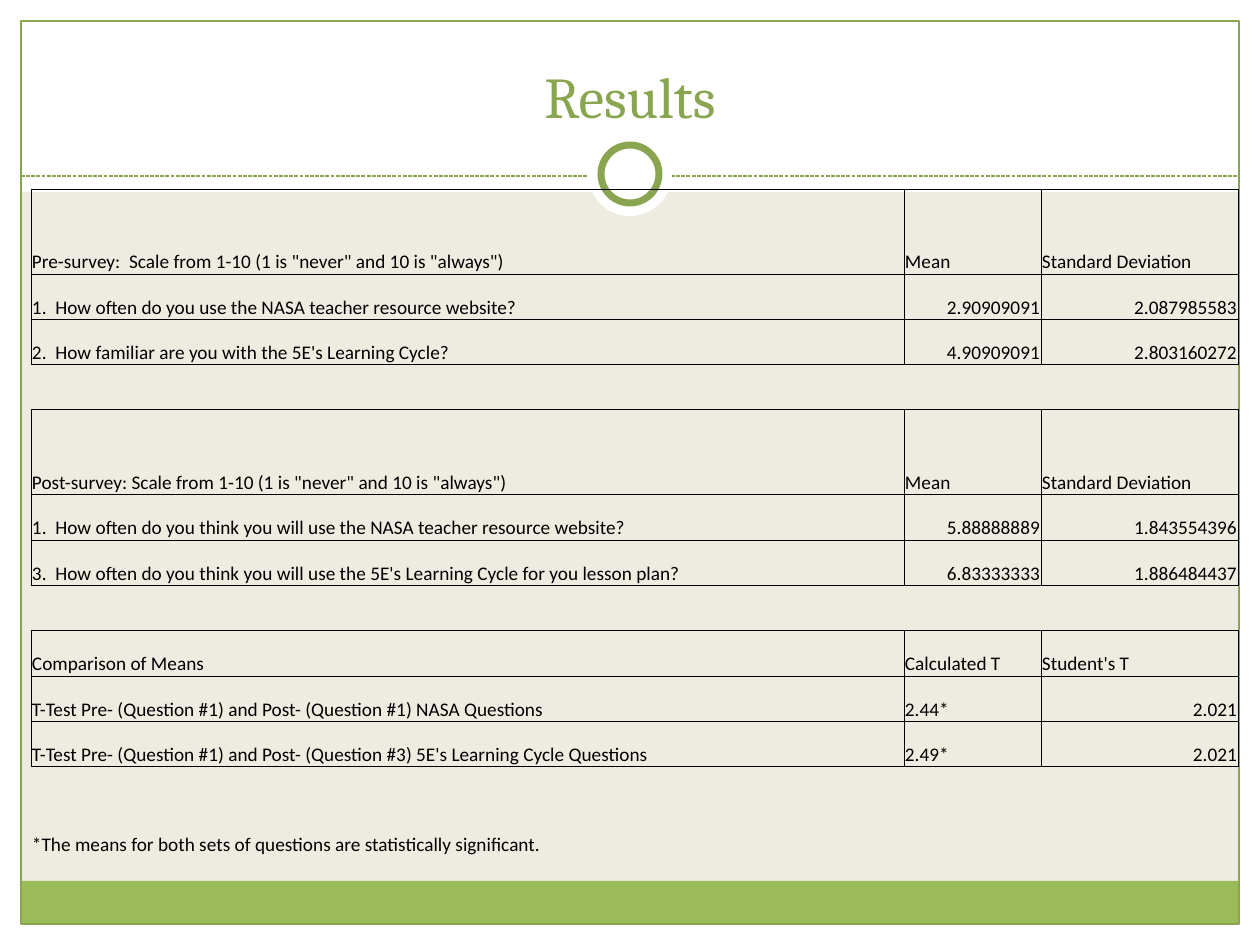
import pptx
import pptx.dml.color
import pptx.enum.dml
import pptx.enum.shapes
import pptx.enum.text
import pptx.oxml.ns
import pptx.util
from lxml import etree

PX = 914400 // 126
COLORS = {"white": "FFFFFF", "cream": "EEECE1", "band": "9BBB59",
          "green": "89A54F", "black": "000000"}
SHAPE = pptx.enum.shapes.MSO_SHAPE
ALIGN = pptx.enum.text.PP_ALIGN
ANCHOR = pptx.enum.text.MSO_ANCHOR

# Content: each section has a header row and two rows of values
TITLE = "Results"
SECTIONS = [
    [("Pre-survey:  Scale from 1-10 (1 is \"never\" and 10 is \"always\")",
      "Mean", "Standard Deviation"),
     ("1.  How often do you use the NASA teacher resource website?",
      "2.90909091", "2.087985583"),
     ("2.  How familiar are you with the 5E's Learning Cycle?",
      "4.90909091", "2.803160272")],
    [("Post-survey: Scale from 1-10 (1 is \"never\" and 10 is \"always\")",
      "Mean", "Standard Deviation"),
     ("1.  How often do you think you will use the NASA teacher resource website?",
      "5.88888889", "1.843554396"),
     ("3.  How often do you think you will use the 5E's Learning Cycle for you lesson plan?",
      "6.83333333", "1.886484437")],
    [("Comparison of Means", "Calculated T", "Student's T"),
     ("T-Test Pre- (Question #1) and Post- (Question #1) NASA Questions",
      "2.44*", "2.021"),
     ("T-Test Pre- (Question #1) and Post- (Question #3) 5E's Learning Cycle Questions",
      "2.49*", "2.021")],
]
FOOTNOTE = "*The means for both sets of questions are statistically significant."

# Layout in px
WIDTH, HEIGHT, MARGIN = 1260, 945, 21
BAND_TOP, FRAME_BOTTOM = 881, 924
RULE_Y, RING_X, RING_Y = 176, 630, 174
TABLE_LEFT, TABLE_TOP, TABLE_HEIGHT = 31, 189, 714
COLUMN_WIDTHS = [873, 137, 197]
TALL_ROWS, TALL_HEIGHT = (0, 4), 85


def px(value):
    return pptx.util.Emu(round(value * PX))


def rgb(name):
    return pptx.dml.color.RGBColor.from_string(COLORS[name])


def write_text(frame, text, font="Calibri", size=11, color="black", align=ALIGN.LEFT):
    paragraph = frame.paragraphs[0]
    paragraph.alignment = align
    paragraph.font.size = pptx.util.Pt(size)
    if text:
        run = paragraph.add_run()
        run.text = text
        run.font.name = font
        run.font.size = pptx.util.Pt(size)
        run.font.color.rgb = rgb(color)
    else:
        end = etree.SubElement(paragraph._p, pptx.oxml.ns.qn("a:endParaRPr"))
        end.set("sz", str(size * 100))


def add_shape(slide, kind, left, top, width, height, fill=None, line=None, weight=0.75):
    shape = slide.shapes.add_shape(kind, px(left), px(top), px(width), px(height))
    shape.shadow.inherit = False
    if fill:
        shape.fill.solid()
        shape.fill.fore_color.rgb = rgb(fill)
    else:
        shape.fill.background()
    if line:
        shape.line.color.rgb = rgb(line)
        shape.line.width = pptx.util.Pt(weight)
    else:
        shape.line.fill.background()


def add_circle(slide, diameter, **style):
    add_shape(slide, SHAPE.OVAL, RING_X - diameter / 2, RING_Y - diameter / 2,
              diameter, diameter, **style)


def set_borders(cell, sides):
    properties = cell._tc.get_or_add_tcPr()
    for side in "LRTB":
        line = etree.SubElement(properties, pptx.oxml.ns.qn("a:ln" + side))
        line.set("w", str(pptx.util.Pt(0.5)))
        if side in sides:
            fill = etree.SubElement(line, pptx.oxml.ns.qn("a:solidFill"))
            etree.SubElement(fill, pptx.oxml.ns.qn("a:srgbClr")).set("val", COLORS["black"])
        else:
            etree.SubElement(line, pptx.oxml.ns.qn("a:noFill"))


def add_backdrop(slide):
    slide.background.fill.solid()
    slide.background.fill.fore_color.rgb = rgb("cream")
    inner_width = WIDTH - 2 * MARGIN
    for box in [(0, FRAME_BOTTOM, WIDTH, HEIGHT - FRAME_BOTTOM), (0, 0, WIDTH, 192),
                (0, 0, MARGIN, HEIGHT), (WIDTH - MARGIN, 0, MARGIN, HEIGHT)]:
        add_shape(slide, SHAPE.RECTANGLE, *box, fill="white")
    add_shape(slide, SHAPE.RECTANGLE, MARGIN, BAND_TOP, inner_width,
              FRAME_BOTTOM - BAND_TOP, fill="band")
    add_shape(slide, SHAPE.RECTANGLE, MARGIN, MARGIN, inner_width,
              FRAME_BOTTOM - MARGIN, line="green")

    # Dashed rule with the ring over its middle
    rule = slide.shapes.add_connector(pptx.enum.shapes.MSO_CONNECTOR.STRAIGHT, px(MARGIN),
                                      px(RULE_Y), px(WIDTH - MARGIN), px(RULE_Y))
    rule.line.color.rgb = rgb("green")
    rule.line.width = pptx.util.Pt(0.75)
    rule.line.dash_style = pptx.enum.dml.MSO_LINE.SQUARE_DOT
    etree.SubElement(rule._element.spPr, pptx.oxml.ns.qn("a:effectLst"))
    add_circle(slide, 84, fill="white")
    add_circle(slide, 58, fill="white", line="green", weight=4)


def add_title(slide):
    box = slide.shapes.add_textbox(px(42), px(31), px(1176), px(105))
    box.text_frame.word_wrap = True
    box.text_frame.vertical_anchor = ANCHOR.BOTTOM
    write_text(box.text_frame, TITLE, font="Cambria", size=33, color="green",
               align=ALIGN.CENTER)


def add_results(slide):
    # A gap row follows each section; the footnote and a blank row close the table
    blank = ("", "", "")
    rows = []
    for section in SECTIONS:
        rows += [(row, "LRTB") for row in section] + [(blank, "TB")]
    rows[-1] = (blank, "T")
    rows += [((FOOTNOTE, "", ""), ""), (blank, "")]

    table = slide.shapes.add_table(len(rows), len(COLUMN_WIDTHS), px(TABLE_LEFT), px(TABLE_TOP),
                                   px(sum(COLUMN_WIDTHS)), px(TABLE_HEIGHT)).table
    table.first_row = table.horz_banding = False
    for column, width in zip(table.columns, COLUMN_WIDTHS):
        column.width = px(width)
    short_height = (TABLE_HEIGHT - TALL_HEIGHT * len(TALL_ROWS)) / (len(rows) - len(TALL_ROWS))
    for index, (texts, sides) in enumerate(rows):
        table.rows[index].height = px(TALL_HEIGHT if index in TALL_ROWS else short_height)
        for cell, text in zip(table.rows[index].cells, texts):
            cell.margin_left = cell.margin_right = cell.margin_top = px(1)
            cell.margin_bottom = 0
            cell.vertical_anchor = ANCHOR.BOTTOM
            numeric = text.replace(".", "").isdigit()
            write_text(cell.text_frame, text, align=ALIGN.RIGHT if numeric else ALIGN.LEFT)
            set_borders(cell, sides)
            cell.fill.background()


def main():
    presentation = pptx.Presentation()
    presentation.slide_width, presentation.slide_height = px(WIDTH), px(HEIGHT)
    slide = presentation.slides.add_slide(presentation.slide_layouts[6])
    add_backdrop(slide)
    add_title(slide)
    add_results(slide)
    presentation.save("out.pptx")


if __name__ == "__main__":
    main()
